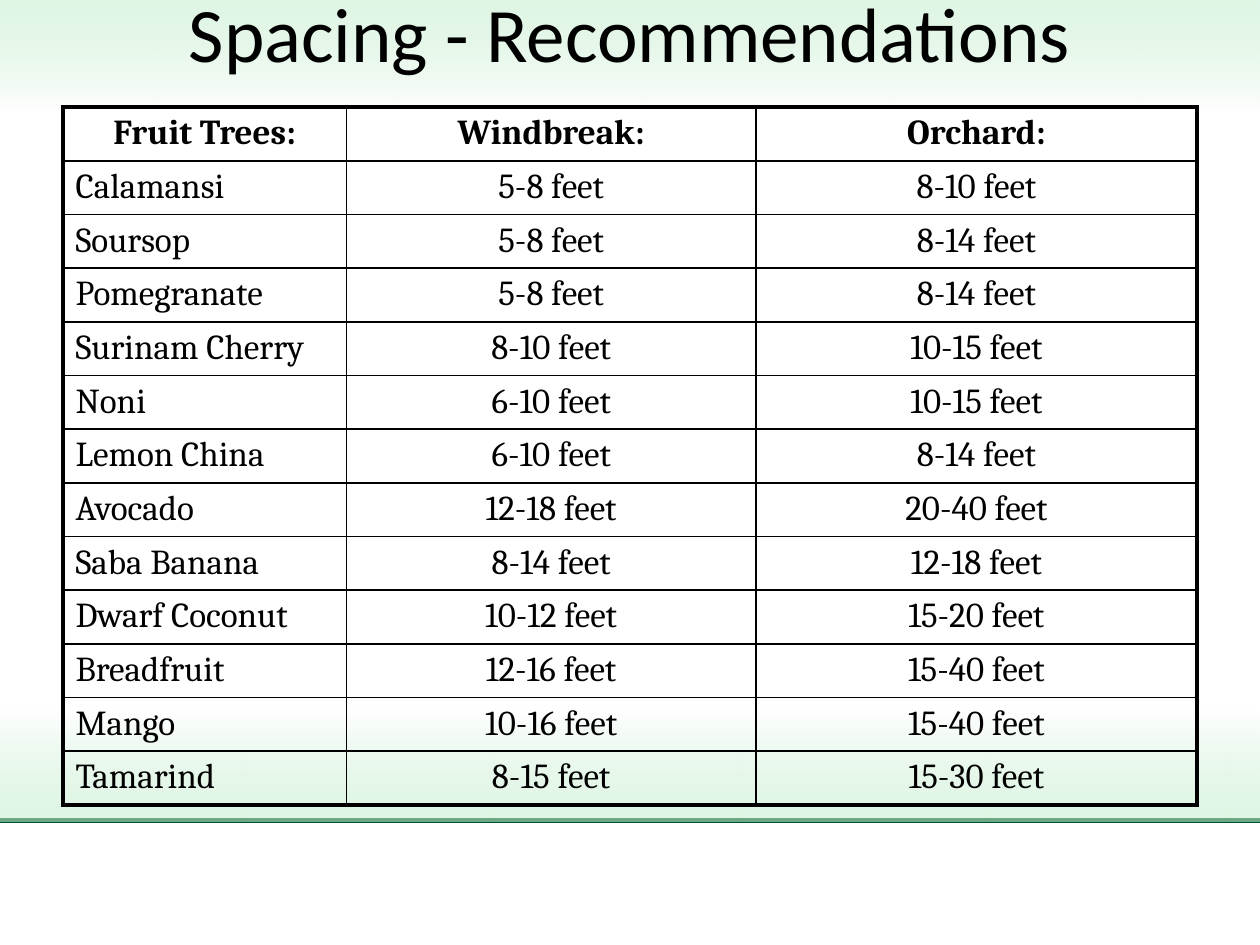
from lxml import etree
from pptx import Presentation
from pptx.dml.color import RGBColor
from pptx.enum.shapes import MSO_CONNECTOR, MSO_SHAPE
from pptx.enum.text import MSO_ANCHOR, PP_ALIGN
from pptx.oxml.ns import qn
from pptx.util import Inches, Pt

TITLE = "Spacing - Recommendations"
HEADER = ("Fruit Trees:", "Windbreak:", "Orchard:")
SPACINGS = [
    ("Calamansi", "5-8 feet", "8-10 feet"),
    ("Soursop", "5-8 feet", "8-14 feet"),
    ("Pomegranate", "5-8 feet", "8-14 feet"),
    ("Surinam Cherry", "8-10 feet", "10-15 feet"),
    ("Noni", "6-10 feet", "10-15 feet"),
    ("Lemon China", "6-10 feet", "8-14 feet"),
    ("Avocado", "12-18 feet", "20-40 feet"),
    ("Saba Banana", "8-14 feet", "12-18 feet"),
    ("Dwarf Coconut", "10-12 feet", "15-20 feet"),
    ("Breadfruit", "12-16 feet", "15-40 feet"),
    ("Mango", "10-16 feet", "15-40 feet"),
    ("Tamarind", "8-15 feet", "15-30 feet"),
]
COLUMN_WIDTHS = (2.25, 3.25, 3.5)
TABLE_HEIGHT = 5.54
OUTER_BORDER, INNER_BORDER = 2.25, 1
BANDS = [(0, 0), (5.62, 180)]  # top, rotation
BLACK, WHITE, PALE_GREEN, DARK_GREEN = "000000", "FFFFFF", "C7EFD0", "00542D"


def rgb(color):
    return RGBColor.from_string(color)


def set_font(paragraph, name, size, bold=False):
    font = paragraph.font
    font.name, font.size, font.bold = name, Pt(size), bold
    font.color.rgb = rgb(BLACK)


def add_band(slide, top, rotation):
    """Add a full-width band that fades from translucent green to white."""
    band = slide.shapes.add_shape(MSO_SHAPE.RECTANGLE, 0, Inches(top), Inches(10), Inches(0.9))
    band.shadow.inherit = False
    band.rotation = rotation
    band.line.fill.background()
    band.fill.gradient()
    band.fill.gradient_angle = 270
    for stop, color, position in zip(band.fill.gradient_stops, (PALE_GREEN, WHITE), (0, 1)):
        stop.color.rgb = rgb(color)
        stop.position = position
    first_color = next(band._element.spPr.iter(qn("a:srgbClr")))
    etree.SubElement(first_color, qn("a:alpha"), val="54000")


def add_rule(slide):
    rule = slide.shapes.add_connector(
        MSO_CONNECTOR.STRAIGHT, Inches(-0.16), Inches(6.51), Inches(10.16), Inches(6.51))
    rule.line.color.rgb = rgb(DARK_GREEN)
    rule.line.width = Pt(3)
    etree.SubElement(rule._element.spPr, qn("a:effectLst"))


def set_borders(cell, outer_sides):
    """Draw all four sides, heavier where the side is on the table's edge."""
    properties = cell._tc.get_or_add_tcPr()
    for side in "LRTB":
        width = OUTER_BORDER if side in outer_sides else INNER_BORDER
        line = etree.SubElement(properties, qn(f"a:ln{side}"), w=str(Pt(width)))
        fill = etree.SubElement(line, qn("a:solidFill"))
        etree.SubElement(fill, qn("a:srgbClr"), val=BLACK)


def add_spacing_table(slide):
    rows = [HEADER] + SPACINGS
    last_row, last_column = len(rows) - 1, len(HEADER) - 1
    table = slide.shapes.add_table(
        len(rows), len(HEADER), Inches(0.5), Inches(0.85),
        Inches(sum(COLUMN_WIDTHS)), Inches(TABLE_HEIGHT)).table
    table.first_row = table.horz_banding = False
    for column, width in zip(table.columns, COLUMN_WIDTHS):
        column.width = Inches(width)
    for r, texts in enumerate(rows):
        table.rows[r].height = Inches(TABLE_HEIGHT / len(rows))
        for c, text in enumerate(texts):
            cell = table.cell(r, c)
            edges = {"T": r == 0, "B": r == last_row, "L": c == 0, "R": c == last_column}
            set_borders(cell, [side for side, is_edge in edges.items() if is_edge])
            cell.fill.background()
            cell.text = text
            paragraph = cell.text_frame.paragraphs[0]
            paragraph.alignment = PP_ALIGN.LEFT if r and c == 0 else PP_ALIGN.CENTER
            set_font(paragraph, "Cambria", 20, bold=r == 0)


def set_title(slide):
    title = slide.shapes.title
    title.left, title.top = Inches(0.5), Inches(-0.08)
    title.width, title.height = Inches(9), Inches(1.63)
    title.text_frame.text = TITLE
    title.text_frame.vertical_anchor = MSO_ANCHOR.TOP
    paragraph = title.text_frame.paragraphs[0]
    paragraph.alignment = PP_ALIGN.CENTER
    paragraph.line_spacing = 0.9
    set_font(paragraph, "Calibri", 44)


def main():
    presentation = Presentation()
    presentation.slide_width, presentation.slide_height = Inches(10), Inches(7.5)
    slide = presentation.slides.add_slide(presentation.slide_layouts[5])
    add_rule(slide)
    for top, rotation in BANDS:
        add_band(slide, top, rotation)
    # Bring the title in front of the bands
    slide.shapes._spTree.append(slide.shapes.title._element)
    set_title(slide)
    add_spacing_table(slide)
    presentation.save("out.pptx")


if __name__ == "__main__":
    main()
